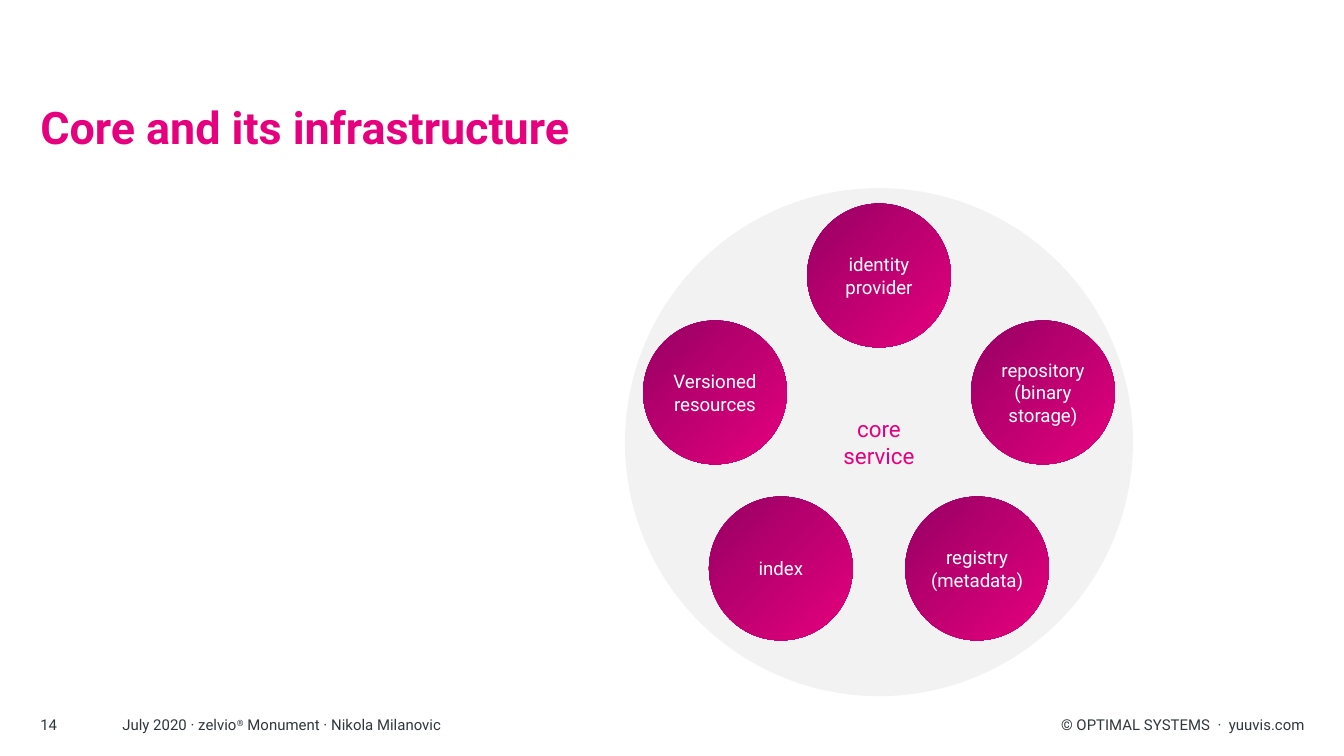
from pptx import Presentation
from pptx.dml.color import RGBColor
from pptx.enum.shapes import MSO_SHAPE
from pptx.enum.text import MSO_ANCHOR, PP_ALIGN
from pptx.util import Inches, Pt

PINK = RGBColor(0xE6, 0x00, 0x7D)
PURPLE = RGBColor(0x96, 0x00, 0x64)
SLATE = RGBColor(0x2E, 0x37, 0x3C)
PALE = RGBColor(0xF2, 0xF2, 0xF2)
WHITE = RGBColor(0xFF, 0xFF, 0xFF)
FONT = "Roboto"

CORE_CENTER = (6.54, 3.29)
CORE_SIZE = 3.78
SERVICE_SIZE = 1.07
SERVICES = [
    ("identity provider", 0, -1.24),
    ("repository (binary storage)", 1.22, -0.37),
    ("registry (metadata)", 0.73, 0.94),
    ("index", -0.73, 0.94),
    ("Versioned resources", -1.22, -0.37),
]
FOOTER_TOP, FOOTER_HEIGHT, FOOTER_POINTS = 5.26, 0.2, 8


def style_span(span, size, color, bold=False):
    span.font.name = FONT
    span.font.size = Pt(size)
    span.font.bold = bold
    span.font.color.rgb = color


def set_margins(frame, margin):
    frame.margin_left = frame.margin_right = Inches(margin)
    frame.margin_top = frame.margin_bottom = Inches(margin)


def add_text(page, bounds, pieces, size, color, align=PP_ALIGN.LEFT, bold=False):
    box = page.shapes.add_textbox(*map(Inches, bounds))
    frame = box.text_frame
    frame.word_wrap = True
    frame.vertical_anchor = MSO_ANCHOR.BOTTOM
    set_margins(frame, 0)
    paragraph = frame.paragraphs[0]
    paragraph.alignment = align
    for piece in pieces:
        span = paragraph.add_run()
        span.text = piece
        style_span(span, size, color, bold)
    return paragraph


def add_footer(page, left, width, pieces, align=PP_ALIGN.LEFT):
    bounds = (left, FOOTER_TOP, width, FOOTER_HEIGHT)
    return add_text(page, bounds, pieces, FOOTER_POINTS, SLATE, align)


def add_circle(page, center_x, center_y, diameter, text, size, color):
    left, top = center_x - diameter / 2, center_y - diameter / 2
    circle = page.shapes.add_shape(
        MSO_SHAPE.OVAL, Inches(left), Inches(top), Inches(diameter), Inches(diameter)
    )
    circle.shadow.inherit = False
    circle.line.fill.background()
    frame = circle.text_frame
    frame.text = text
    frame.word_wrap = True
    frame.vertical_anchor = MSO_ANCHOR.MIDDLE
    for paragraph in frame.paragraphs:
        paragraph.alignment = PP_ALIGN.CENTER
        for span in paragraph.runs:
            style_span(span, size, color)
    return circle


def add_core(page):
    core = add_circle(page, *CORE_CENTER, CORE_SIZE, "core\nservice", 12, PINK)
    core.fill.solid()
    core.fill.fore_color.rgb = PALE


def add_service(page, text, offset_x, offset_y):
    center_x, center_y = CORE_CENTER
    service = add_circle(
        page, center_x + offset_x, center_y + offset_y, SERVICE_SIZE, text, 10, WHITE
    )
    set_margins(service.text_frame, 0)
    service.fill.gradient()
    service.fill.gradient_angle = 315
    for stop, color in zip(service.fill.gradient_stops, (PURPLE, PINK)):
        stop.color.rgb = color


def main():
    deck = Presentation()
    deck.slide_width = Inches(10)
    deck.slide_height = Inches(10 * 9 / 16)
    page = deck.slides.add_slide(deck.slide_layouts[6])

    add_footer(page, 7.74, 1.97, ["© OPTIMAL SYSTEMS  ·  yuuvis.com"], PP_ALIGN.RIGHT)
    add_footer(page, 0.3, 0.39, ["14"])
    title = add_text(
        page, (0.3, 0.29, 8.4, 0.86), ["Core and its infrastructure"], 24, PINK, bold=True
    )
    title.line_spacing = 0.9
    credit = add_footer(
        page, 0.91, 6.69, ["July 2020 · zelvio", "®", " Monument · Nikola Milanovic"]
    )
    credit.runs[1].font._element.set("baseline", "30000")

    add_core(page)
    for text, offset_x, offset_y in SERVICES:
        add_service(page, text, offset_x, offset_y)

    deck.save("out.pptx")


if __name__ == "__main__":
    main()
